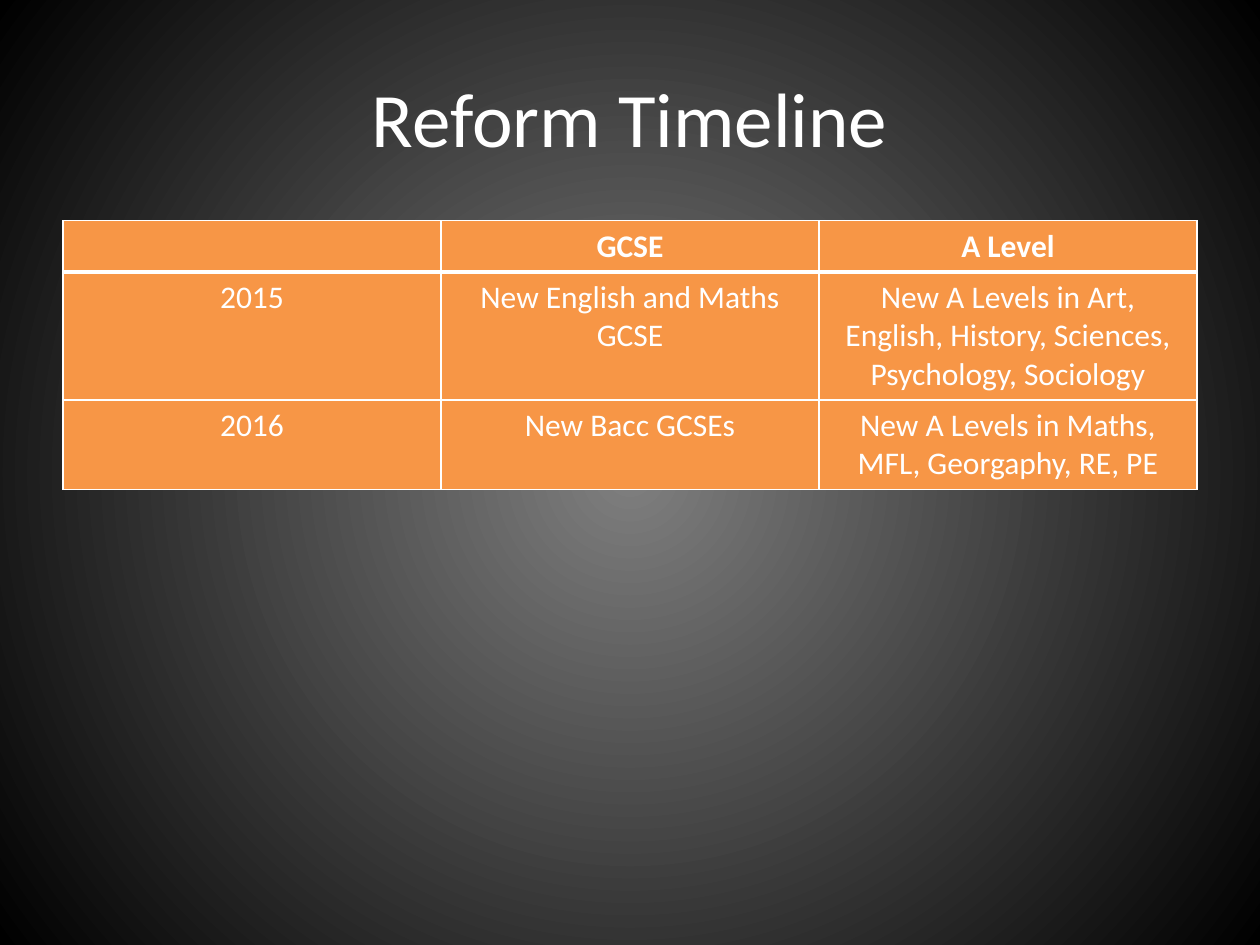
import lxml.etree
import pptx
import pptx.dml.color
import pptx.enum.text
import pptx.oxml.ns
import pptx.util
from pptx.util import Cm

THEME = {
    "font": "Calibri",
    "text": "FFFFFF",
    "border": "FFFFFF",
    "cell": "F79646",
    "glow": "7F7F7F",
    "edge": "000000",
    "title_size": 44,
    "table_size": 18,
}
ROWS = [
    ["", "GCSE", "A Level"],
    ["2015", "New English and Maths GCSE",
     "New A Levels in Art, English, History, Sciences, Psychology, Sociology"],
    ["2016", "New Bacc GCSEs", "New A Levels in Maths, MFL, Georgaphy, RE, PE"],
]
qn = pptx.oxml.ns.qn


def rgb(name):
    return pptx.dml.color.RGBColor.from_string(THEME[name])


def format_text(frame, size, bold=False):
    for paragraph in frame.paragraphs:
        paragraph.alignment = pptx.enum.text.PP_ALIGN.CENTER
        for span in paragraph.runs:
            span.font.name = THEME["font"]
            span.font.size = pptx.util.Pt(THEME[size])
            span.font.bold = bold
            span.font.color.rgb = rgb("text")


deck = pptx.Presentation()
deck.slide_width, deck.slide_height = Cm(25.4), Cm(19.05)
page = deck.slides.add_slide(deck.slide_layouts[5])

# Circular background glow from the centre of the page
backdrop = page.background.fill
backdrop.gradient()
for stop, name, position in zip(backdrop.gradient_stops, ("glow", "edge"), (0, 1)):
    stop.color.rgb = rgb(name)
    stop.position = position
gradient = next(page._element.iter(qn("a:gradFill")))
gradient.remove(gradient.find(qn("a:lin")))
circle = lxml.etree.SubElement(gradient, qn("a:path"), path="circle")
lxml.etree.SubElement(circle, qn("a:fillToRect"),
                      {side: "50000" for side in "ltrb"})

title = page.shapes.title
title.left, title.top, title.width, title.height = Cm(1.27), Cm(0.76), Cm(22.86), Cm(3.18)
title.text_frame.text = "Reform Timeline"
title.text_frame.vertical_anchor = pptx.enum.text.MSO_ANCHOR.MIDDLE
format_text(title.text_frame, "title_size")

timeline = page.shapes.add_table(len(ROWS), len(ROWS[0]), Cm(1.27), Cm(4.45),
                                 Cm(22.86), Cm(3.09)).table
for row_index, texts in enumerate(ROWS):
    for column_index, text in enumerate(texts):
        cell = timeline.cell(row_index, column_index)
        cell.text_frame.text = text
        format_text(cell.text_frame, "table_size", bold=row_index == 0)
        cell.fill.solid()
        cell.fill.fore_color.rgb = rgb("cell")

        # Thin grid, with a heavy rule between the header and the years
        heavy_side = {0: "B", 1: "T"}.get(row_index)
        properties = cell._tc.get_or_add_tcPr()
        for order, side in enumerate("LRTB"):
            width = pptx.util.Pt(3 if side == heavy_side else 1)
            line = lxml.etree.Element(qn(f"a:ln{side}"), w=str(width))
            solid = lxml.etree.SubElement(line, qn("a:solidFill"))
            lxml.etree.SubElement(solid, qn("a:srgbClr"), val=THEME["border"])
            properties.insert(order, line)

deck.save("out.pptx")
